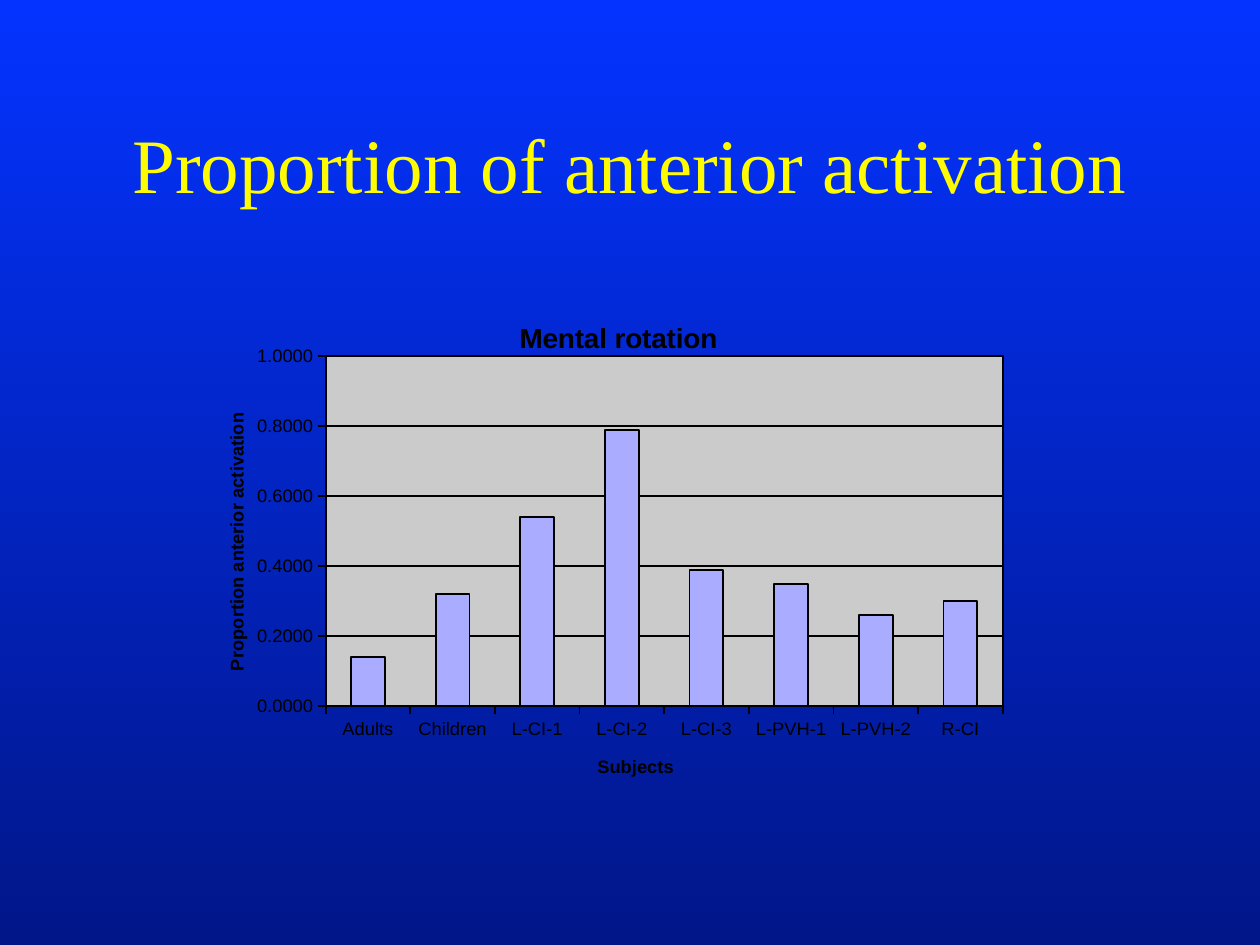
from lxml import etree
from pptx import Presentation
from pptx.chart.data import CategoryChartData
from pptx.dml.color import RGBColor
from pptx.enum.chart import XL_CHART_TYPE, XL_TICK_LABEL_POSITION, XL_TICK_MARK
from pptx.enum.text import MSO_ANCHOR, PP_ALIGN
from pptx.oxml import parse_xml
from pptx.oxml.ns import nsdecls, qn
from pptx.util import Emu, Pt

COLUMNS = XL_CHART_TYPE.COLUMN_CLUSTERED
LABELS_LOW = XL_TICK_LABEL_POSITION.LOW
TICK_OUTSIDE = XL_TICK_MARK.OUTSIDE
TICK_NONE = XL_TICK_MARK.NONE
MIDDLE = MSO_ANCHOR.MIDDLE
CENTER = PP_ALIGN.CENTER

NAVY = RGBColor(0x01, 0x16, 0x89)
BLUE = RGBColor(0x04, 0x33, 0xFF)
YELLOW = RGBColor(0xFF, 0xFB, 0x00)
BLACK = RGBColor(0x00, 0x00, 0x00)
WHITE = RGBColor(0xFF, 0xFF, 0xFF)
GRAY = RGBColor(0xCB, 0xCB, 0xCB)
LAVENDER = RGBColor(0xAA, 0xAD, 0xFF)

EMU_PER_PX = 9144
SLIDE_SIZE = (1000, 750)
TITLE_BOX = (75, 42, 850, 175)
CHART_BOX = (169, 243, 630, 378)

ACTIVATION = {
    "Adults": 0.14, "Children": 0.32, "L-CI-1": 0.54, "L-CI-2": 0.79,
    "L-CI-3": 0.39, "L-PVH-1": 0.35, "L-PVH-2": 0.26, "R-CI": 0.3,
}


def px(length):
    """Turn px into EMU."""
    return Emu(length * EMU_PER_PX)


def style_font(font, name, size, color, bold=False):
    """Set the face, size, colour and weight of a font."""
    font.name, font.size, font.bold = name, Pt(size), bold
    font.color.rgb = color


def style_line(line):
    """Make a line thin and black."""
    line.color.rgb = BLACK
    line.width = Pt(1)


def set_layout(layout, **settings):
    """Fill a chart layout element with a manual layout."""
    manual = etree.SubElement(layout, qn("c:manualLayout"))
    for name, value in settings.items():
        etree.SubElement(manual, qn(f"c:{name}")).set("val", str(value))


def set_chart_title(title, text, size, left, top):
    """Write a chart or axis title at fractions of the chart's size."""
    title.text_frame.text = text
    run = title.text_frame.paragraphs[0].runs[0]
    style_font(run.font, "Arial", size, BLACK, bold=True)
    layout = title._element.find(qn("c:layout"))
    set_layout(layout, xMode="edge", yMode="edge", x=left, y=top)


def style_axis(axis, title, left, top):
    """Format an axis and its title."""
    axis.major_tick_mark = TICK_OUTSIDE
    axis.minor_tick_mark = TICK_NONE
    style_font(axis.tick_labels.font, "Arial", 10.5, BLACK)
    style_line(axis.format.line)
    set_chart_title(axis.axis_title, title, 10.5, left, top)


def style_plot_area(chart):
    """Place the plot area and give it a gray fill and black border."""
    plot_area = chart._chartSpace.chart.plotArea
    layout = plot_area.find(qn("c:layout"))
    if layout is None:
        layout = etree.Element(qn("c:layout"))
        plot_area.insert(0, layout)
    set_layout(layout, layoutTarget="inner", xMode="edge", yMode="edge",
               x=0.142, y=0.107, w=0.853, h=0.748)
    plot_area.append(parse_xml(
        f'<c:spPr {nsdecls("c", "a")}>'
        f'<a:solidFill><a:srgbClr val="{GRAY}"/></a:solidFill>'
        f'<a:ln w="{Pt(1)}"><a:solidFill><a:srgbClr val="{BLACK}"/></a:solidFill></a:ln>'
        '</c:spPr>'))


def add_activation_chart(slide, box):
    """Add the column chart of activation by subject."""
    data = CategoryChartData(number_format="0.0000")
    data.categories = list(ACTIVATION)
    data.add_series("Series 1", list(ACTIVATION.values()))
    chart = slide.shapes.add_chart(COLUMNS, *map(px, box), data).chart
    style_font(chart.font, "Times New Roman", 10, WHITE)
    chart.has_legend = False
    set_chart_title(chart.chart_title, "Mental rotation", 16, 0.38, 0.02)
    chart.chart_title._element.find(qn("c:overlay")).set("val", "1")

    style_axis(chart.category_axis, "Subjects", 0.48, 0.95)
    chart.category_axis.tick_label_position = LABELS_LOW
    value_axis = chart.value_axis
    style_axis(value_axis, "Proportion anterior activation", 0.01, 0.23)
    value_axis.minimum_scale, value_axis.maximum_scale = 0, 1
    value_axis.major_unit = 0.2
    value_axis.tick_labels.number_format = "0.0000"
    value_axis.tick_labels.number_format_is_linked = False
    style_line(value_axis.major_gridlines.format.line)

    plot = chart.plots[0]
    plot.gap_width = 150
    plot.vary_by_categories = False
    series = plot.series[0]
    series.format.fill.solid()
    series.format.fill.fore_color.rgb = LAVENDER
    style_line(series.format.line)
    style_plot_area(chart)


def place_title(slide, box):
    """Place and format the slide title."""
    title = slide.shapes.title
    title.left, title.top, title.width, title.height = map(px, box)
    frame = title.text_frame
    frame.text = "Proportion of anterior activation"
    frame.word_wrap = True
    frame.vertical_anchor = MIDDLE
    frame.margin_left = frame.margin_right = px(6)
    frame.margin_top = frame.margin_bottom = px(6)
    paragraph = frame.paragraphs[0]
    paragraph.alignment = CENTER
    style_font(paragraph.runs[0].font, "Times New Roman", 44, YELLOW)


def paint_background(slide):
    """Fill the background with a gradient from navy at the bottom to blue."""
    fill = slide.background.fill
    fill.gradient()
    fill.gradient_angle = 90
    for stop, color, position in zip(fill.gradient_stops, (NAVY, BLUE), (0, 1)):
        stop.color.rgb = color
        stop.position = position


def main():
    """Build and save the presentation."""
    presentation = Presentation()
    presentation.slide_width, presentation.slide_height = map(px, SLIDE_SIZE)
    slide = presentation.slides.add_slide(presentation.slide_layouts[5])
    paint_background(slide)
    place_title(slide, TITLE_BOX)
    add_activation_chart(slide, CHART_BOX)
    presentation.save("out.pptx")


if __name__ == "__main__":
    main()
